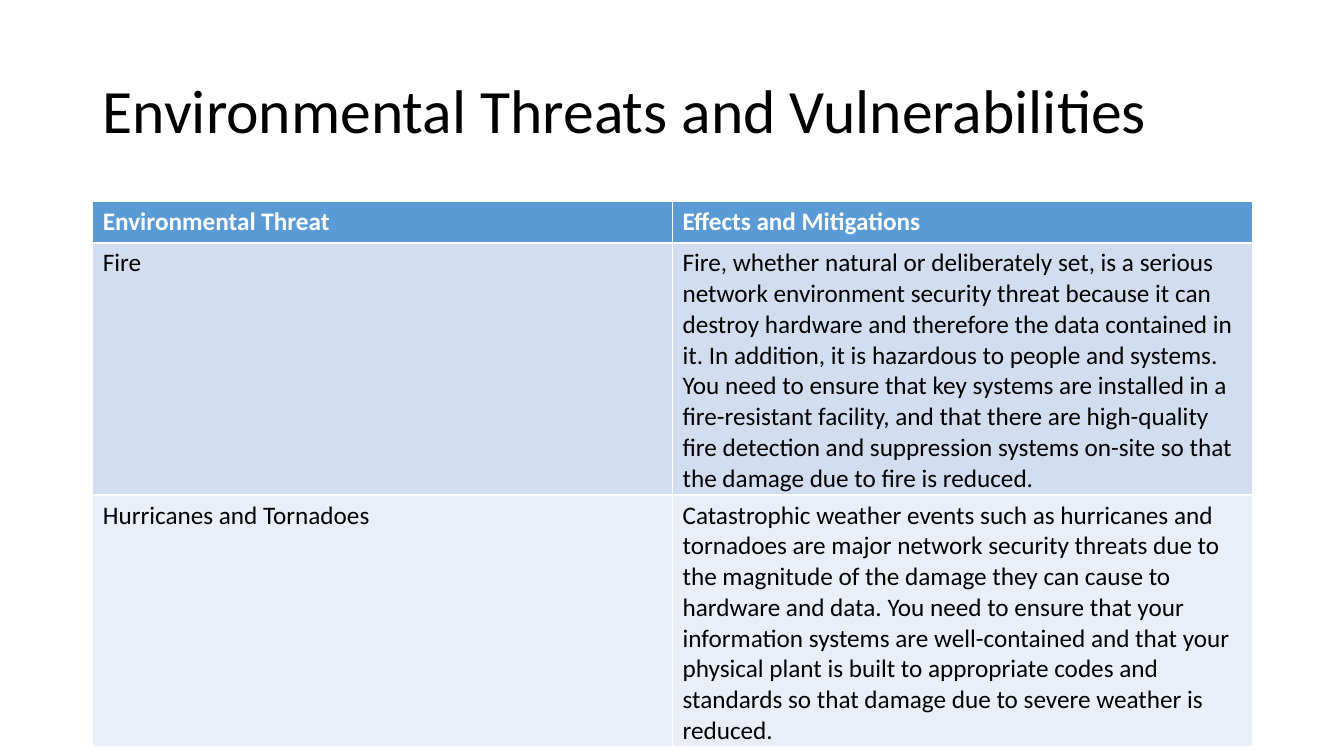
from pptx import Presentation
from pptx.dml.color import RGBColor
from pptx.enum.text import MSO_ANCHOR
from pptx.util import Inches, Pt

TITLE = "Environmental Threats and Vulnerabilities"
# Each cell is a list of paragraphs
ROWS = [
    (["Environmental Threat"], ["Effects and Mitigations"]),
    (["Fire"],
     ["Fire, whether natural or deliberately set, is a serious network environment "
      "security threat because it can destroy hardware and therefore the data contained "
      "in it. In addition, it is hazardous to people and systems. You need to ensure that "
      "key systems are installed in a fire-resistant facility, and that there are "
      "high-quality fire detection and suppression systems on-site so that the damage "
      "due to fire is reduced."]),
    (["Hurricanes and Tornadoes"],
     ["Catastrophic weather events such as hurricanes and tornadoes are major network "
      "security threats due to the magnitude of the damage they can cause to hardware "
      "and data. You need to ensure that your",
      "information systems are well-contained and that your physical plant is built to "
      "appropriate codes and standards so that damage due to severe weather is reduced."]),
]
COLORS = {"text": "000000", "header_text": "FFFFFF", "header": "5B9BD5",
          "odd": "D2DEEF", "even": "EAEFF7"}
FONT = "Calibri"
LEFT, WIDTH, ROW_HEIGHT = 0.92, 11.5, 0.41


def write(tf, lines, size, color, bold=False):
    tf.text = "\n".join(lines)
    for p in tf.paragraphs:
        for r in p.runs:
            r.font.name = FONT
            r.font.size = Pt(size)
            r.font.bold = bold
            r.font.color.rgb = RGBColor.from_string(COLORS[color])


prs = Presentation()
prs.slide_width, prs.slide_height = Inches(13.33), Inches(7.5)
s = prs.slides.add_slide(prs.slide_layouts[6])

# Title
tf = s.shapes.add_textbox(Inches(LEFT), Inches(0.4), Inches(WIDTH), Inches(1.45)).text_frame
tf.word_wrap = True
tf.vertical_anchor = MSO_ANCHOR.MIDDLE
write(tf, [TITLE], 44, "text")
tf.paragraphs[0].line_spacing = 0.9

# Threat table: rows grow to fit their text, the table style draws white borders
table = s.shapes.add_table(len(ROWS), len(ROWS[0]), Inches(LEFT), Inches(2),
                           Inches(WIDTH), Inches(ROW_HEIGHT * len(ROWS))).table
for i, row in enumerate(ROWS):
    fill = "header" if i == 0 else "odd" if i % 2 else "even"
    for j, lines in enumerate(row):
        cell = table.cell(i, j)
        cell.fill.solid()
        cell.fill.fore_color.rgb = RGBColor.from_string(COLORS[fill])
        write(cell.text_frame, lines, 18, "text" if i else "header_text", bold=i == 0)

prs.save("out.pptx")
